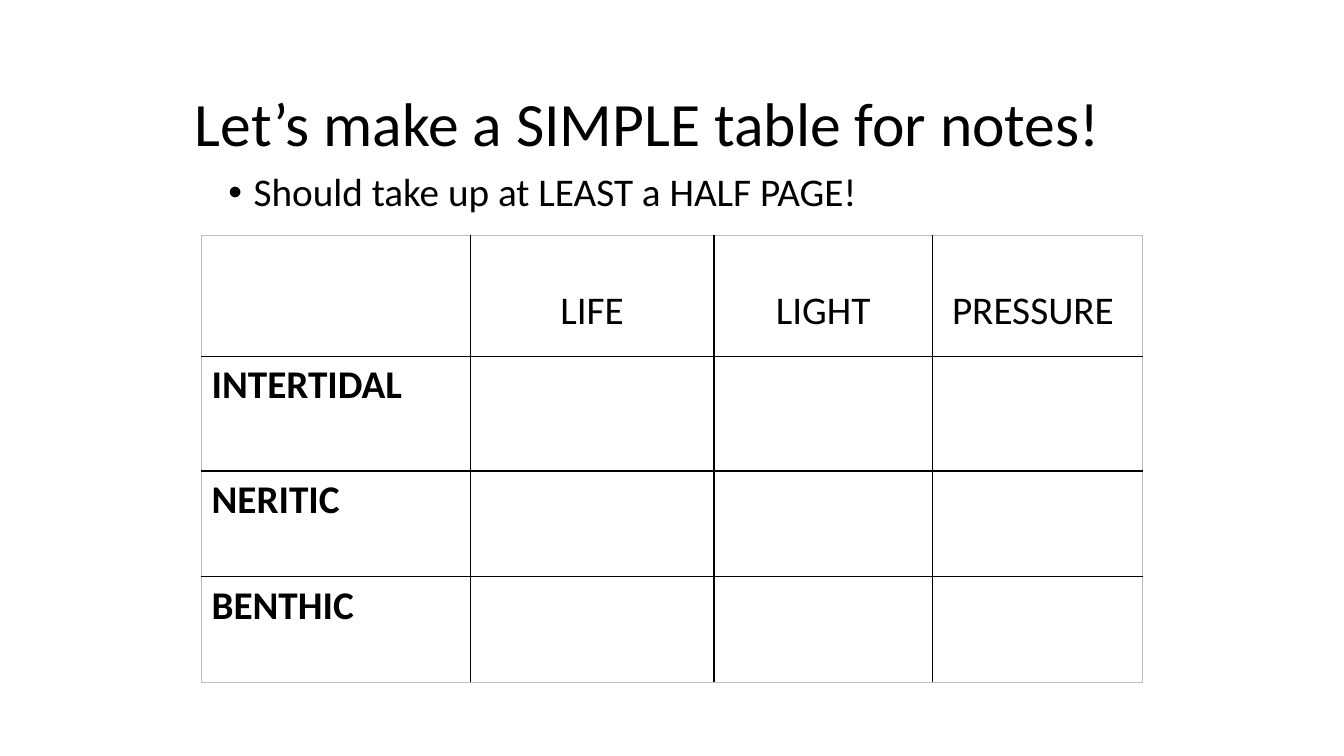
from dataclasses import dataclass

from lxml.etree import SubElement
from pptx import Presentation
from pptx.dml.color import RGBColor
from pptx.enum.text import MSO_ANCHOR, MSO_AUTO_SIZE, PP_ALIGN
from pptx.oxml.ns import qn
from pptx.util import Inches, Pt

BLACK = RGBColor(0, 0, 0)
WHITE = RGBColor(255, 255, 255)
GREY = RGBColor(0xBF, 0xBF, 0xBF)
GRID_COLS, GRID_ROWS = 80, 45
COL_UNITS = (16, 14.5, 13, 12.5)
ROW_UNITS = (7.2, 6.84, 6.3, 6.3)
HEADERS = ("", "LIFE", "LIGHT", "PRESSURE ")
ZONES = ("INTERTIDAL", "NERITIC", "BENTHIC")

prs = Presentation()
prs.slide_width, prs.slide_height = Inches(13.33), Inches(7.5)


@dataclass(frozen=True)
class Area:
    """A rectangle in grid columns and rows."""
    left: float
    top: float
    width: float
    height: float

    def box(self) -> dict:
        """Return the rectangle in slide lengths."""
        return {"left": across(self.left), "top": down(self.top),
                "width": across(self.width), "height": down(self.height)}


@dataclass(frozen=True)
class Holder:
    """A placeholder's text, place and look."""
    idx: int
    text: str
    area: Area
    size: int
    anchor: MSO_ANCHOR
    bullet: bool = False


HOLDERS = (
    Holder(0, "Let’s make a SIMPLE table for notes!", Area(11, 4.6, 58, 5.9),
           44, MSO_ANCHOR.MIDDLE),
    Holder(1, "Should take up at LEAST a HALF PAGE!", Area(13, 10, 54, 31.5),
           28, MSO_ANCHOR.TOP, True),
)
TABLE = Area(12, 14, sum(COL_UNITS), sum(ROW_UNITS))


def across(cols: float) -> int:
    """Convert grid columns to a length."""
    return int(prs.slide_width * cols / GRID_COLS)


def down(rows: float) -> int:
    """Convert grid rows to a length."""
    return int(prs.slide_height * rows / GRID_ROWS)


def apply(obj, values: dict) -> None:
    """Set each attribute in values on obj."""
    for name, value in values.items():
        setattr(obj, name, value)


def style_font(font, size: int, bold: bool = False) -> None:
    """Give a font the slide's typeface and colour."""
    apply(font, {"name": "Calibri", "size": Pt(size), "bold": bold})
    font.color.rgb = BLACK


def fill_holder(s, holder: Holder) -> None:
    """Place, fill and format one placeholder."""
    sp = s.placeholders[holder.idx]
    apply(sp, holder.area.box())
    tf = sp.text_frame
    apply(tf, {"text": holder.text, "word_wrap": True,
               "auto_size": MSO_AUTO_SIZE.NONE,
               "vertical_anchor": holder.anchor})
    p = tf.paragraphs[0]
    apply(p, {"alignment": PP_ALIGN.LEFT, "line_spacing": 0.9,
              "space_before": Pt(0)})
    if holder.bullet:
        pPr = p._p.get_or_add_pPr()
        pPr.set("marL", str(Inches(0.25)))
        pPr.set("indent", str(Inches(-0.25)))
        SubElement(pPr, qn("a:buFont"), typeface="Arial")
        SubElement(pPr, qn("a:buChar"), char="•")
    style_font(p.runs[0].font, holder.size)


def add_border(cell, side: str, outer: bool) -> None:
    """Draw one cell edge, fainter on the outside of the table."""
    width, color = (0.5, GREY) if outer else (1, BLACK)
    ln = SubElement(cell._tc.get_or_add_tcPr(), qn(f"a:ln{side}"),
                    w=str(Pt(width)))
    SubElement(SubElement(ln, qn("a:solidFill")), qn("a:srgbClr"),
               val=str(color))


def format_cell(cell, text: str, row: int, col: int) -> None:
    """Fill one cell and draw its edges."""
    edges = {"L": col == 0, "R": col == len(COL_UNITS) - 1,
             "T": row == 0, "B": row == len(ROW_UNITS) - 1}
    for side, outer in edges.items():
        add_border(cell, side, outer)
    cell.fill.solid()
    cell.fill.fore_color.rgb = WHITE
    if not text:
        return
    header = row == 0
    apply(cell, {"text": text, "vertical_anchor": MSO_ANCHOR.TOP,
                 "margin_top": Inches(0.52 if header else 0.05)})
    p = cell.text_frame.paragraphs[0]
    p.alignment = PP_ALIGN.CENTER if header else PP_ALIGN.LEFT
    style_font(p.runs[0].font, 28, not header)


def add_notes_table(s) -> None:
    """Add the table of ocean zones."""
    table = s.shapes.add_table(len(ROW_UNITS), len(COL_UNITS),
                               **TABLE.box()).table
    apply(table, {"first_row": False, "horz_banding": False})
    for column, units in zip(table.columns, COL_UNITS):
        column.width = across(units)
    for row, units in zip(table.rows, ROW_UNITS):
        row.height = down(units)
    texts = [HEADERS, *((zone, "", "", "") for zone in ZONES)]
    for r, line in enumerate(texts):
        for c, text in enumerate(line):
            format_cell(table.cell(r, c), text, r, c)


def main() -> None:
    """Build and save the slide."""
    s = prs.slides.add_slide(prs.slide_layouts[1])
    for holder in HOLDERS:
        fill_holder(s, holder)
    add_notes_table(s)
    prs.save("out.pptx")


if __name__ == "__main__":
    main()
